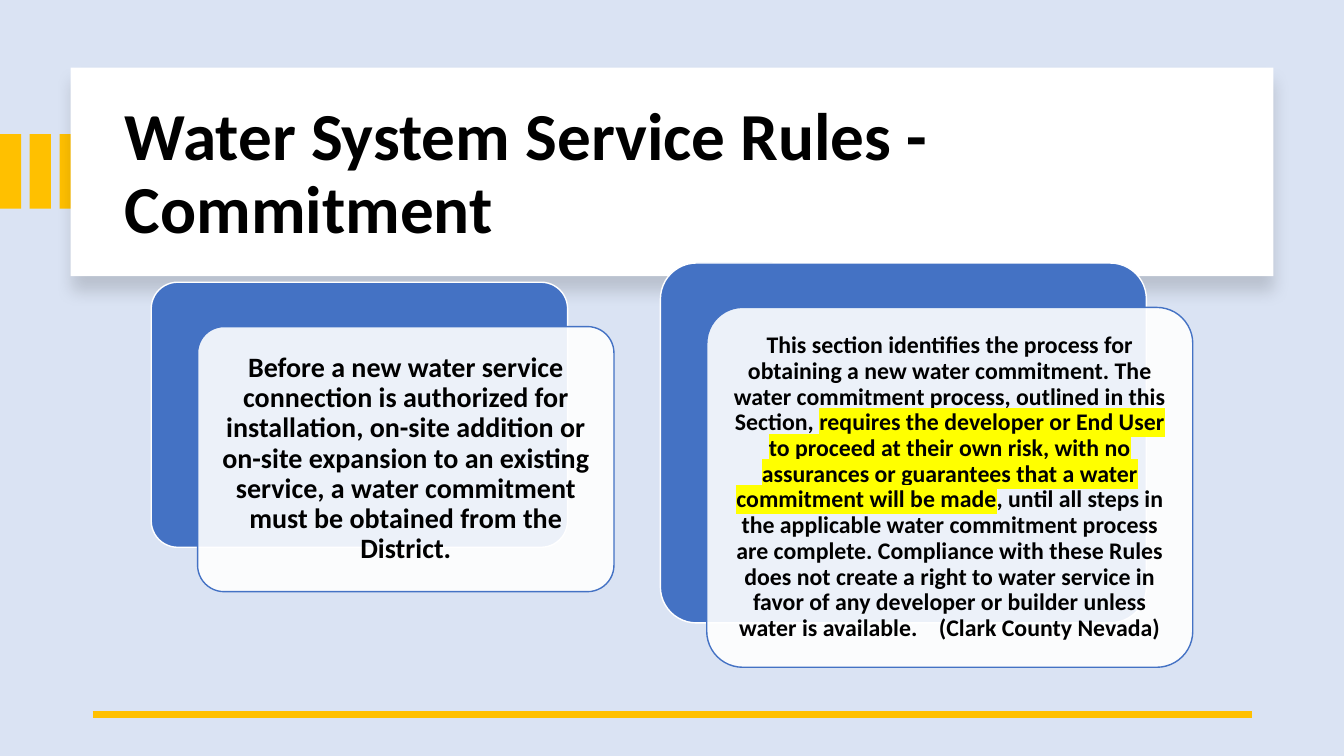
from dataclasses import dataclass

from lxml import etree
from pptx import Presentation
from pptx.dml.color import RGBColor
from pptx.enum.shapes import MSO_CONNECTOR, MSO_SHAPE
from pptx.enum.text import MSO_ANCHOR, PP_ALIGN
from pptx.oxml.ns import qn
from pptx.util import Inches, Pt

RECTANGLE = MSO_SHAPE.RECTANGLE
ROUNDED = MSO_SHAPE.ROUNDED_RECTANGLE
STRAIGHT = MSO_CONNECTOR.STRAIGHT
MIDDLE = MSO_ANCHOR.MIDDLE
LEFT, CENTER = PP_ALIGN.LEFT, PP_ALIGN.CENTER


@dataclass(frozen=True)
class Theme:
    font: str = "Calibri"
    background: str = "DAE3F3"
    accent: str = "FFC000"
    card: str = "4472C4"
    panel: str = "FFFFFF"
    text: str = "000000"
    highlight: str = "FFFF00"
    title_size: int = 48
    short_size: int = 20
    long_size: int = 17


def color(value):
    return RGBColor.from_string(value)


def add_run(paragraph, text, *, font, size, fill, highlight=None):
    run = paragraph.add_run()
    run.text = text
    run.font.name = font
    run.font.size = Pt(size)
    run.font.bold = True
    run.font.color.rgb = color(fill)
    if highlight:
        mark = etree.Element(qn("a:highlight"))
        etree.SubElement(mark, qn("a:srgbClr"), val=highlight)
        run.font._element.find(qn("a:solidFill")).addnext(mark)


class SlideBuilder:
    def __init__(self, slide, theme):
        self.slide = slide
        self.theme = theme
        slide.background.fill.solid()
        slide.background.fill.fore_color.rgb = color(theme.background)

    def box(self, left, top, width, height, fill, *, kind=RECTANGLE, line=None, opacity=100):
        shape = self.slide.shapes.add_shape(
            kind, Inches(left), Inches(top), Inches(width), Inches(height))
        shape.shadow.inherit = False
        shape.fill.solid()
        shape.fill.fore_color.rgb = color(fill)
        if opacity < 100:
            tint = shape._element.spPr.find(qn("a:solidFill"))[0]
            etree.SubElement(tint, qn("a:alpha"), val=str(opacity * 1000))
        if line:
            shape.line.color.rgb = color(line)
            shape.line.width = Pt(1)
        else:
            shape.line.fill.background()
        if kind == ROUNDED:
            shape.adjustments[0] = 0.1
        return shape

    def drop_shadow(self, shape, blur, distance, opacity):
        """Cast a soft shadow straight down; lengths are in points."""
        effects = shape._element.spPr.find(qn("a:effectLst"))
        shadow = etree.SubElement(
            effects, qn("a:outerShdw"), blurRad=str(Pt(blur)), dist=str(Pt(distance)),
            dir="5400000", algn="t", rotWithShape="0")
        tint = etree.SubElement(shadow, qn("a:srgbClr"), val=self.theme.text)
        etree.SubElement(tint, qn("a:alpha"), val=str(opacity * 1000))

    def text(self, left, top, width, height, parts, size, *, align=CENTER, inset=(0.08, 0.08)):
        """Write one paragraph from (text, highlight) parts."""
        text_box = self.slide.shapes.add_textbox(
            Inches(left), Inches(top), Inches(width), Inches(height))
        frame = text_box.text_frame
        frame.word_wrap = True
        frame.vertical_anchor = MIDDLE
        frame.margin_left = frame.margin_right = Inches(inset[0])
        frame.margin_top = frame.margin_bottom = Inches(inset[1])
        paragraph = frame.paragraphs[0]
        paragraph.alignment = align
        paragraph.line_spacing = 0.9
        for words, highlight in parts:
            add_run(paragraph, words, font=self.theme.font, size=size,
                    fill=self.theme.text, highlight=highlight)

    def rule(self, left, right, top, width):
        connector = self.slide.shapes.add_connector(
            STRAIGHT, Inches(left), Inches(top), Inches(right), Inches(top))
        connector.line.color.rgb = color(self.theme.accent)
        connector.line.width = Pt(width)
        etree.SubElement(connector._element.spPr, qn("a:effectLst"))

    def card(self, left, top, width, height, parts, size, padding):
        """Draw a solid card with a translucent text panel shifted down and right."""
        theme = self.theme
        self.box(left, top, width, height, theme.card, kind=ROUNDED, line=theme.panel)
        left, top = left + 0.46, top + 0.44
        self.box(left, top, width, height, theme.panel, kind=ROUNDED,
                 line=theme.card, opacity=90)
        self.text(left + padding, top + padding, width - 2 * padding,
                  height - 2 * padding, parts, size)


def main():
    theme = Theme()
    presentation = Presentation()
    presentation.slide_width = Inches(13.33)
    presentation.slide_height = Inches(7.5)
    slide = presentation.slides.add_slide(presentation.slide_layouts[6])
    builder = SlideBuilder(slide, theme)

    for index in range(3):
        builder.box(index * 0.295, 1.33, 0.21, 0.74, theme.accent)
    banner = builder.box(0.7, 0.67, 11.93, 2.07, theme.panel)
    builder.drop_shadow(banner, blur=11, distance=10, opacity=15)
    builder.text(1.14, 0.89, 11.28, 1.7, [("Water System Service Rules - Commitment", None)],
                 theme.title_size, align=LEFT, inset=(0.1, 0.05))
    builder.rule(0.92, 12.42, 7.09, 4.5)

    service_parts = [
        ("Before a new water service connection is authorized for installation, on-site "
         "addition or on-site expansion to an existing service, a water commitment must be "
         "obtained from the District.", None),
    ]
    process_parts = [
        ("This section identifies the process for obtaining a new water commitment. The water "
         "commitment process, outlined in this Section, ", None),
        ("requires the developer or End User to proceed at their own risk, with no assurances "
         "or guarantees that a water commitment will be made", theme.highlight),
        (", until all steps in the applicable water commitment process are complete. "
         "Compliance with these Rules does not create a right to water service in favor of any "
         "developer or builder unless water is available.    (Clark County Nevada)", None),
    ]
    builder.card(1.5, 2.8, 4.13, 2.63, service_parts, theme.short_size, padding=0.08)
    builder.card(6.55, 2.61, 4.82, 3.57, process_parts, theme.long_size, padding=0.1)

    presentation.save("out.pptx")


if __name__ == "__main__":
    main()
